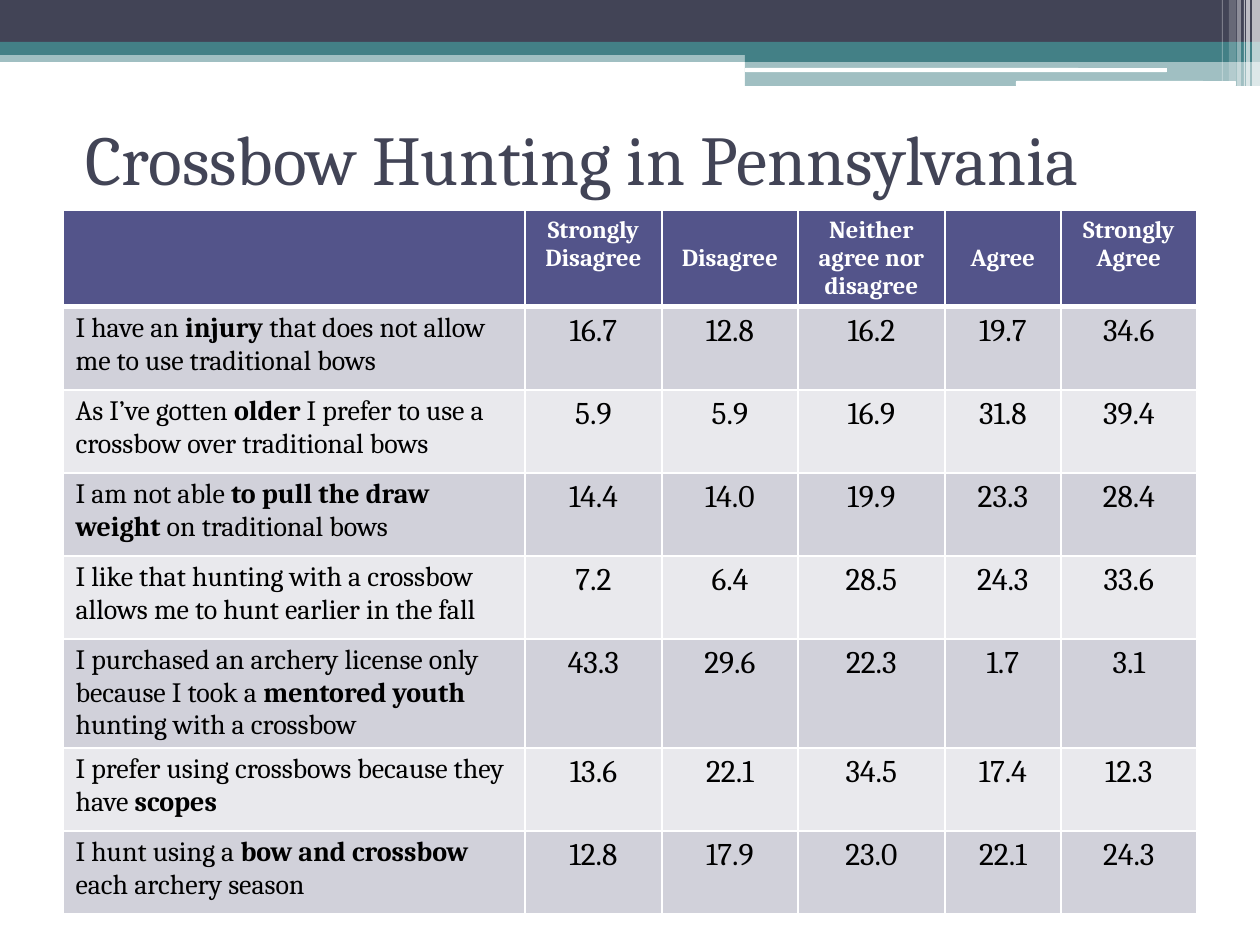
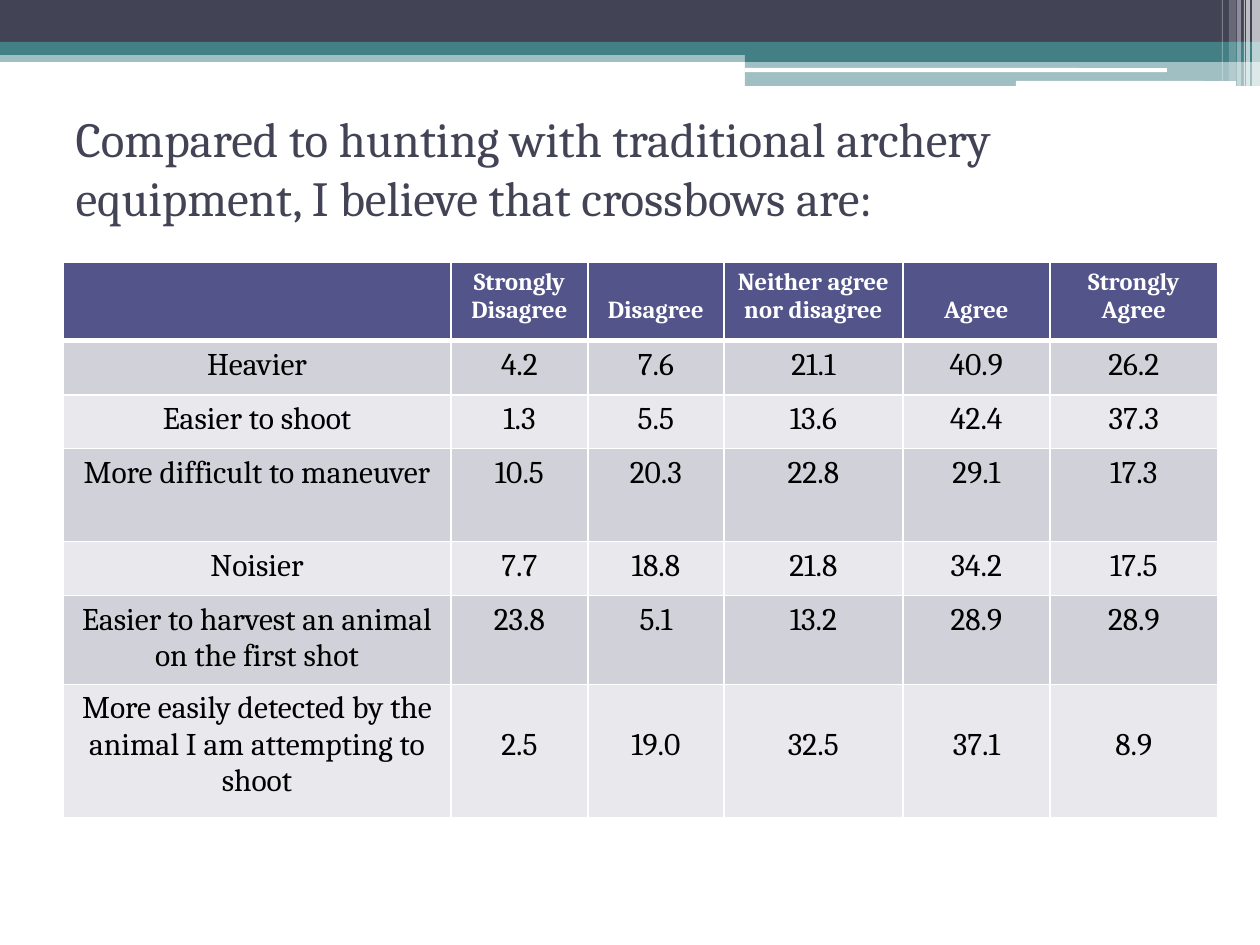
from dataclasses import dataclass

from lxml import etree
from pptx import Presentation
from pptx import util as u
from pptx.dml import color
from pptx.enum import shapes, text
from pptx.oxml import ns

SCALE = 914400 / 126


@dataclass(frozen=True)
class Theme:
    """Colours, font and type sizes of the deck."""
    font: str = "Cambria"
    dark: str = "424456"
    teal: str = "438086"
    head: str = "53548A"
    white: str = "FFFFFF"
    black: str = "000000"
    rows: tuple[str, str] = ("D1D1DA", "E9E9ED")
    small: int = 14
    label: int = 16
    value: int = 18


@dataclass(frozen=True)
class Box:
    """A place on the slide in px."""
    x: int
    y: int
    w: int
    h: int


@dataclass(frozen=True)
class Band:
    """One flat bar of the top trim."""
    box: Box
    fill: str
    alpha: int = 100
    round: bool = False


@dataclass(frozen=True)
class Grid:
    """A survey table; asterisks in a label mark bold words."""
    box: Box
    cols: tuple[int, ...]
    high: tuple[int, ...]
    heads: tuple[str, ...]
    rows: tuple[tuple[str, str], ...]
    size: int
    align: text.PP_ALIGN
    low: tuple[int, ...] = ()


@dataclass(frozen=True)
class Page:
    """A titled slide with one table."""
    title: str
    size: int
    box: Box
    grid: Grid


T = Theme()

BANDS = (
    Band(Box(0, 50, 1260, 12), T.teal, 50),
    Band(Box(0, 0, 1260, 42), T.dark),
    Band(Box(0, 42, 1260, 13), T.teal),
    Band(Box(745, 49, 515, 13), T.teal),
    Band(Box(745, 62, 515, 24), T.teal, 50),
    Band(Box(745, 68, 422, 4), T.white, round=True),
    Band(Box(1016, 81, 220, 5), T.white, round=True),
    *(Band(Box(x, 0, w, h), T.white, alpha) for x, w, h, alpha in (
        (1252, 8, 86, 65), (1246, 4, 86, 65), (1244, 1, 86, 60),
        (1237, 4, 86, 40), (1229, 7, 81, 20), (1222, 1, 81, 30))),
)

HEADS = ("", "Strongly Disagree", "Disagree", "Neither agree nor disagree", "Agree", "Strongly Agree")

PAGES = (
    Page("Crossbow Hunting in Pennsylvania", 40, Box(73, 84, 1134, 147), Grid(
        Box(63, 210, 1134, 703), (462, 137, 136, 147, 116, 136),
        (96, 83, 83, 83, 83, 109, 83, 83), HEADS, (
            ("I have an *injury* that does not allow me to use traditional bows", "16.7 12.8 16.2 19.7 34.6"),
            ("As I’ve gotten *older *I prefer to use a crossbow over traditional bows", "5.9 5.9 16.9 31.8 39.4"),
            ("I am not able *to pull the draw weight* on traditional bows", "14.4 14.0 19.9 23.3 28.4"),
            ("I like that hunting with a crossbow allows me to hunt earlier in the fall", "7.2 6.4 28.5 24.3 33.6"),
            ("I purchased an archery license only because I took a *mentored youth *hunting with a crossbow",
             "43.3 29.6 22.3 1.7 3.1"),
            ("I prefer using crossbows because they have *scopes*", "13.6 22.1 34.5 17.4 12.3"),
            ("I hunt using a *bow and crossbow *each archery season", "12.8 17.9 23.0 22.1 24.3"),
        ), T.label, text.PP_ALIGN.LEFT)),
    Page("Compared to hunting with traditional archery equipment, I believe that crossbows are:", 28,
         Box(63, 94, 1134, 147), Grid(
             Box(63, 262, 1155, 545), (388, 137, 136, 179, 147, 168),
             (68, 54, 54, 93, 54, 89, 133), HEADS, (
                 ("Heavier", "4.2 7.6 21.1 40.9 26.2"),
                 ("Easier to shoot", "1.3 5.5 13.6 42.4 37.3"),
                 ("More difficult to maneuver", "10.5 20.3 22.8 29.1 17.3"),
                 ("Noisier", "7.7 18.8 21.8 34.2 17.5"),
                 ("Easier to harvest an animal on the first shot", "23.8 5.1 13.2 28.9 28.9"),
                 ("More easily detected by the animal I am attempting to shoot", "2.5 19.0 32.5 37.1 8.9"),
             ), T.value, text.PP_ALIGN.CENTER, low=(6,))),
)


def px(n: int) -> u.Emu:
    """Turn px into EMU."""
    return u.Emu(round(n * SCALE))


def place(box: Box) -> tuple[u.Emu, ...]:
    """Give left, top, width and height in EMU."""
    return px(box.x), px(box.y), px(box.w), px(box.h)


def write(para, words: str, size: int, ink: str, bold: bool = False) -> None:
    """Add runs, with bold toggled at each asterisk."""
    for i, part in enumerate(words.split("*")):
        if part:
            run = para.add_run()
            run.text = part
            run.font.name = T.font
            run.font.size = u.Pt(size)
            run.font.bold = bold or i % 2 == 1
            run.font.color.rgb = color.RGBColor.from_string(ink)


def paint(fill, ink: str) -> None:
    """Set a solid fill."""
    fill.solid()
    fill.fore_color.rgb = color.RGBColor.from_string(ink)


def draw_band(slide, band: Band) -> None:
    """Draw one bar of the trim."""
    kind = shapes.MSO_SHAPE.ROUNDED_RECTANGLE if band.round else shapes.MSO_SHAPE.RECTANGLE
    bar = slide.shapes.add_shape(kind, *place(band.box))
    bar.shadow.inherit = False
    bar.line.fill.background()
    paint(bar.fill, band.fill)
    if band.alpha < 100:
        tint = bar.fill._xPr.find(".//" + ns.qn("a:srgbClr"))
        etree.SubElement(tint, ns.qn("a:alpha"), val=str(band.alpha * 1000))


def edge(cell, top: float, base: float) -> None:
    """Rule a cell in white, with given top and base weights."""
    props = cell._tc.get_or_add_tcPr()
    for side, wide in (("L", 1), ("R", 1), ("T", top), ("B", base)):
        line = etree.SubElement(props, ns.qn(f"a:ln{side}"), w=str(u.Pt(wide)))
        fill = etree.SubElement(line, ns.qn("a:solidFill"))
        etree.SubElement(fill, ns.qn("a:srgbClr"), val=T.white)


def draw_cell(cell, words: str, size: int, ink: str, align: text.PP_ALIGN, low: bool, head: bool) -> None:
    """Fill a cell with text, one line lower if asked."""
    cell.margin_top = px(6) + (u.Pt(round(size * 1.17)) if low else 0)
    para = cell.text_frame.paragraphs[0]
    para.alignment = align
    write(para, words, size, ink, head)


def draw_grid(slide, grid: Grid) -> None:
    """Draw the survey table."""
    table = slide.shapes.add_table(len(grid.high), len(grid.cols), *place(grid.box)).table
    for col, wide in zip(table.columns, grid.cols):
        col.width = px(wide)
    lines = [grid.heads, *((name, *nums.split()) for name, nums in grid.rows)]
    for r, (line, high) in enumerate(zip(lines, grid.high)):
        table.rows[r].height = px(high)
        head = r == 0
        for c, words in enumerate(line):
            cell = table.cell(r, c)
            edge(cell, 3 if r == 1 else 1, 3 if head else 1)
            paint(cell.fill, T.head if head else T.rows[(r - 1) % 2])
            name = c == 0 and not head
            size = T.small if head else grid.size if name else T.value
            low = " " not in words if head else r in grid.low and not name
            draw_cell(cell, words, size, T.white if head else T.black,
                      grid.align if name else text.PP_ALIGN.CENTER, low, head)


def draw_page(deck, page: Page) -> None:
    """Add a slide with trim, title and table."""
    slide = deck.slides.add_slide(deck.slide_layouts[5])
    for band in BANDS:
        draw_band(slide, band)
    title = slide.shapes.title
    title.left, title.top, title.width, title.height = place(page.box)
    frame = title.text_frame
    frame.word_wrap = True
    frame.auto_size = text.MSO_AUTO_SIZE.NONE
    frame.vertical_anchor = text.MSO_ANCHOR.MIDDLE
    para = frame.paragraphs[0]
    para.alignment = text.PP_ALIGN.LEFT
    write(para, page.title, page.size, T.dark)
    draw_grid(slide, page.grid)


def main() -> None:
    """Build and save the deck."""
    deck = Presentation()
    deck.slide_width, deck.slide_height = px(1260), px(945)
    for page in PAGES:
        draw_page(deck, page)
    deck.save("out.pptx")


if __name__ == "__main__":
    main()
